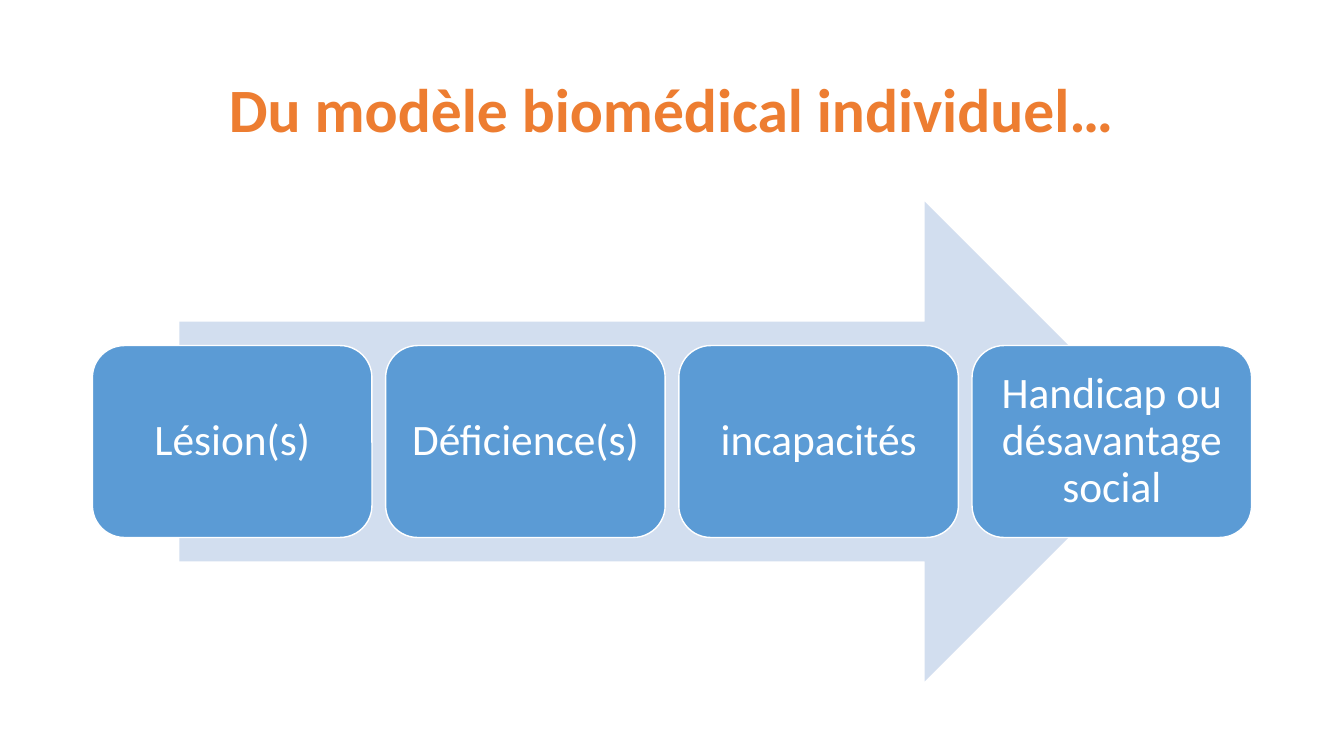
from pptx import Presentation
from pptx import util as u
from pptx.dml.color import RGBColor
from pptx.enum import shapes, text

PX = 9525  # EMU per px, 96 px to the inch
ORANGE = RGBColor(0xED, 0x7D, 0x31)
BLUE = RGBColor(0x5B, 0x9B, 0xD5)
PALE_BLUE = RGBColor(0xD2, 0xDE, 0xEF)
WHITE = RGBColor(0xFF, 0xFF, 0xFF)

TITLE = "Du modèle biomédical individuel…"
STEPS = ["Lésion(s)", "Déficience(s)", "incapacités", "Handicap ou désavantage social"]


def px(n):
    return u.Emu(round(n * PX))


def write(tf, words, size, color, bold=False):
    """Put one centred paragraph in a text frame."""
    tf.word_wrap = True
    tf.auto_size = text.MSO_AUTO_SIZE.NONE
    tf.vertical_anchor = text.MSO_ANCHOR.MIDDLE
    p = tf.paragraphs[0]
    p.alignment = text.PP_ALIGN.CENTER
    p.line_spacing = 0.9
    r = p.add_run()
    r.text = words
    r.font.color.rgb = color
    for name, value in {"name": "Calibri", "size": u.Pt(size), "bold": bold}.items():
        setattr(r.font, name, value)


def add_block(s, kind, box, fill):
    sp = s.shapes.add_shape(kind, *map(px, box))
    sp.shadow.inherit = False
    sp.fill.solid()
    sp.fill.fore_color.rgb = fill
    sp.line.fill.background()
    return sp


def add_title(s, box):
    sp = s.shapes.title
    for name, value in zip(("left", "top", "width", "height"), box):
        setattr(sp, name, px(value))
    write(sp.text_frame, TITLE, 44, ORANGE, bold=True)


def add_process(s, box):
    """Arrow over 85 % of the width, with the steps across its middle."""
    left, top, width, height = box
    arrow_w = width * 0.85
    add_block(s, shapes.MSO_SHAPE.RIGHT_ARROW,
              (left + (width - arrow_w) / 2, top, arrow_w, height), PALE_BLUE)

    gap = 13
    step_w = (width - gap * (len(STEPS) - 1)) / len(STEPS)
    step_h = height * 0.4
    for i, words in enumerate(STEPS):
        sp = add_block(s, shapes.MSO_SHAPE.ROUNDED_RECTANGLE,
                       (left + i * (step_w + gap), top + (height - step_h) / 2, step_w, step_h),
                       BLUE)
        sp.line.color.rgb = WHITE
        sp.line.width = u.Pt(1)
        tf = sp.text_frame
        for side in ("left", "top", "right", "bottom"):
            setattr(tf, f"margin_{side}", px(12))
        write(tf, words, 31, WHITE)


def main():
    prs = Presentation()
    prs.slide_width, prs.slide_height = px(1280), px(720)
    s = prs.slides.add_slide(prs.slide_layouts[5])
    add_title(s, (88, 38, 1104, 139))
    add_process(s, (88, 192, 1104, 457))
    prs.save("out.pptx")


if __name__ == "__main__":
    main()
